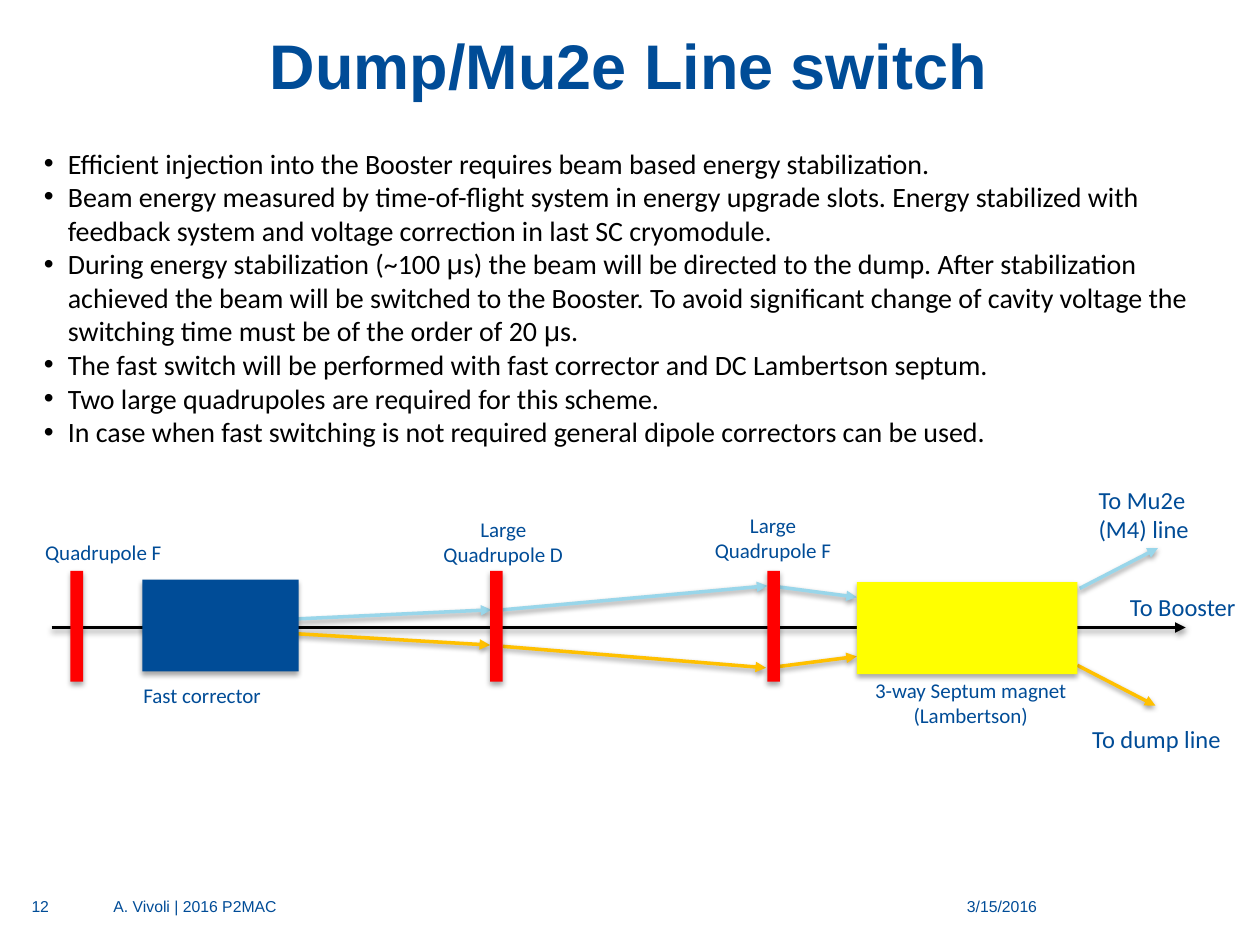
from dataclasses import dataclass

from lxml import etree
from pptx import Presentation
from pptx.dml.color import RGBColor
from pptx.enum.shapes import MSO_CONNECTOR, MSO_SHAPE
from pptx.enum.text import MSO_ANCHOR, MSO_AUTO_SIZE, PP_ALIGN
from pptx.oxml import parse_xml
from pptx.oxml.ns import nsdecls, qn
from pptx.util import Inches, Pt

LEFT, CENTER, RIGHT = PP_ALIGN.LEFT, PP_ALIGN.CENTER, PP_ALIGN.RIGHT
RECTANGLE, STRAIGHT = MSO_SHAPE.RECTANGLE, MSO_CONNECTOR.STRAIGHT
BOTTOM, GROW = MSO_ANCHOR.BOTTOM, MSO_AUTO_SIZE.SHAPE_TO_FIT_TEXT


@dataclass(frozen=True)
class Theme:
    navy: str = "004C97"
    black: str = "000000"
    soft_black: str = "040404"
    red: str = "FF0000"
    yellow: str = "FFFF00"
    sky: str = "99D6EA"
    amber: str = "FFC000"
    heading: str = "Arial"
    body: str = "Calibri"
    title_size: int = 36
    bullet_size: int = 16
    target_size: int = 14
    label_size: int = 12
    footer_size: int = 9
    beam_width: int = 2


THEME = Theme()

# Each bullet is a list of (text, format changes)
MICRO = ("μ", {"name": THEME.heading})
BULLETS = [
    [("Efficient injection into the Booster requires beam based energy stabilization.", {})],
    [("Beam energy measured by time-of-flight system in energy upgrade slots. Energy "
      "stabilized with feedback system and voltage correction in last SC cryomodule.", {})],
    [("During energy stabilization (~100 ", {}), MICRO,
     ("s) the beam will be directed to the dump. After stabilization achieved the beam "
      "will be switched to the Booster. To avoid significant change of cavity voltage "
      "the switching time must be of the order of 20 ", {}), MICRO, ("s.", {})],
    [("The fast switch will be performed with fast corrector and DC Lambertson septum.", {})],
    [("Two large quadrupoles ", {}), ("are required ", {"color": THEME.soft_black}),
     ("for this scheme.", {})],
    [("In case when fast switching is not required general dipole correctors can be used.", {})],
]

# Diagram parts, in inches from the corner of the diagram
AXIS_Y = 1.18
BEAMS = [
    (THEME.sky, [(0.88, 1.17, 3.65, 1.04), (3.74, 1.04, 5.84, 0.85),
                 (5.94, 0.86, 6.55, 0.94), (8.32, 0.87, 8.94, 0.55)]),
    (THEME.black, [(0.16, AXIS_Y, 9.16, AXIS_Y)]),
    (THEME.amber, [(1.42, 1.19, 3.64, 1.32), (3.74, 1.33, 5.83, 1.5),
                   (5.93, 1.49, 6.55, 1.41), (8.3, 1.48, 8.92, 1.8)]),
]
QUADRUPOLE_LEFTS = (0.31, 3.64, 5.84)
MAGNETS = [(THEME.red, (left, 0.73, 0.1, 0.88)) for left in QUADRUPOLE_LEFTS] + [
    (THEME.navy, (0.88, 0.8, 1.24, 0.73)),
    (THEME.yellow, (6.55, 0.82, 1.75, 0.73)),
]
LABELS = [
    ("Quadrupole F", (0.01, 0.43, 1.21, 0.3), LEFT, THEME.label_size),
    ("Fast corrector", (0.79, 1.57, 1.24, 0.3), LEFT, THEME.label_size),
    ("3-way Septum magnet (Lambertson)", (6.59, 1.53, 1.73, 0.5), CENTER, THEME.label_size),
    ("Large Quadrupole D", (3.13, 0.25, 1.23, 0.5), CENTER, THEME.label_size),
    ("Large Quadrupole F", (5.28, 0.22, 1.21, 0.5), CENTER, THEME.label_size),
    ("To Mu2e (M4) line", (8.37, 0, 1.28, 0.57), LEFT, THEME.target_size),
    ("To dump line", (8.32, 1.9, 1.28, 0.34), LEFT, THEME.target_size),
    ("To Booster", (8.62, 0.85, 1.13, 0.34), LEFT, THEME.target_size),
]


def within(box, part):
    """Turn a part measured from the corner of a box into slide lengths."""
    left, top, width, height = part
    return [Inches(value) for value in (box[0] + left, box[1] + top, width, height)]


def add_span(para, text, name, size, color, **formats):
    span = para.add_run()
    span.text = text
    span.font.color.rgb = RGBColor.from_string(color)
    for key, value in {"name": name, "size": Pt(size), **formats}.items():
        setattr(span.font, key, value)


def clear_margins(frame):
    for side in ("left", "top", "right", "bottom"):
        setattr(frame, f"margin_{side}", 0)


def add_text_frame(page, place):
    frame = page.shapes.add_textbox(*place).text_frame
    frame.word_wrap = True
    return frame


def add_shadow(shape, distance, opacity):
    shape._element.spPr.append(parse_xml(
        f'<a:effectLst {nsdecls("a")}>'
        f'<a:outerShdw blurRad="{Pt(3.1)}" dist="{Pt(distance)}" dir="5400000" rotWithShape="0">'
        f'<a:srgbClr val="{THEME.black}"><a:alpha val="{opacity * 1000}"/></a:srgbClr>'
        '</a:outerShdw></a:effectLst>'))


def place_title(page, box):
    title = page.shapes.title
    place = within(box, (0, 0, *box[2:]))
    for key, value in zip(("left", "top", "width", "height"), place):
        setattr(title, key, value)
    frame = title.text_frame
    clear_margins(frame)
    frame.vertical_anchor = BOTTOM
    para = frame.paragraphs[0]
    para.alignment = CENTER
    add_span(para, "Dump/Mu2e Line switch", THEME.heading, THEME.title_size,
             THEME.navy, bold=True)


def place_bullets(page, box):
    frame = add_text_frame(page, within(box, (0, 0, *box[2:])))
    frame.auto_size = GROW
    indent = Inches(0.19)
    for index, spans in enumerate(BULLETS):
        para = frame.add_paragraph() if index else frame.paragraphs[0]
        properties = para._p.get_or_add_pPr()
        properties.set("marL", str(indent))
        properties.set("indent", str(-indent))
        etree.SubElement(properties, qn("a:buFont"), typeface=THEME.heading)
        etree.SubElement(properties, qn("a:buChar"), char="•")
        base = {"name": THEME.body, "size": THEME.bullet_size, "color": THEME.black}
        for text, changes in spans:
            add_span(para, text, **{**base, **changes})


def add_beam(page, box, ends, color):
    left, top = box[:2]
    x1, y1, x2, y2 = ends
    beam = page.shapes.add_connector(STRAIGHT, Inches(left + x1), Inches(top + y1),
                                     Inches(left + x2), Inches(top + y2))
    beam.line.color.rgb = RGBColor.from_string(color)
    beam.line.width = Pt(THEME.beam_width)
    etree.SubElement(beam._element.spPr.find(qn("a:ln")), qn("a:tailEnd"), type="triangle")
    add_shadow(beam, 1.6, 38)


def place_diagram(page, box):
    # Beam paths
    for color, segments in BEAMS:
        for ends in segments:
            add_beam(page, box, ends, color)
    # Magnets
    for color, part in MAGNETS:
        magnet = page.shapes.add_shape(RECTANGLE, *within(box, part))
        magnet.fill.solid()
        magnet.fill.fore_color.rgb = RGBColor.from_string(color)
        magnet.line.fill.background()
        add_shadow(magnet, 1.8, 35)
    # Labels
    for text, part, alignment, size in LABELS:
        frame = add_text_frame(page, within(box, part))
        frame.auto_size = GROW
        para = frame.paragraphs[0]
        para.alignment = alignment
        add_span(para, text, THEME.body, size, THEME.navy)


def place_footer(page, box):
    for text, left, width, alignment in (
        ("12", 0, 0.49, LEFT),
        ("A. Vivoli | 2016 P2MAC", 0.65, 4.85, LEFT),
        ("3/15/2016", 6.8, 1.18, RIGHT),
    ):
        frame = add_text_frame(page, within(box, (left, 0, width, box[3])))
        clear_margins(frame)
        para = frame.paragraphs[0]
        para.alignment = alignment
        add_span(para, text, THEME.heading, THEME.footer_size, THEME.navy)


def main():
    deck = Presentation()
    deck.slide_width, deck.slide_height = Inches(10), Inches(7.5)
    page = deck.slides.add_slide(deck.slide_layouts.get_by_name("Title Only"))
    place_title(page, (0.25, 0.11, 9.48, 0.7))
    place_diagram(page, (0.25, 3.8, 9.75, 2.24))
    place_bullets(page, (0.25, 1.11, 9.51, 2.52))
    place_footer(page, (0.25, 7.12, 7.98, 0.26))
    deck.save("out.pptx")


if __name__ == "__main__":
    main()
